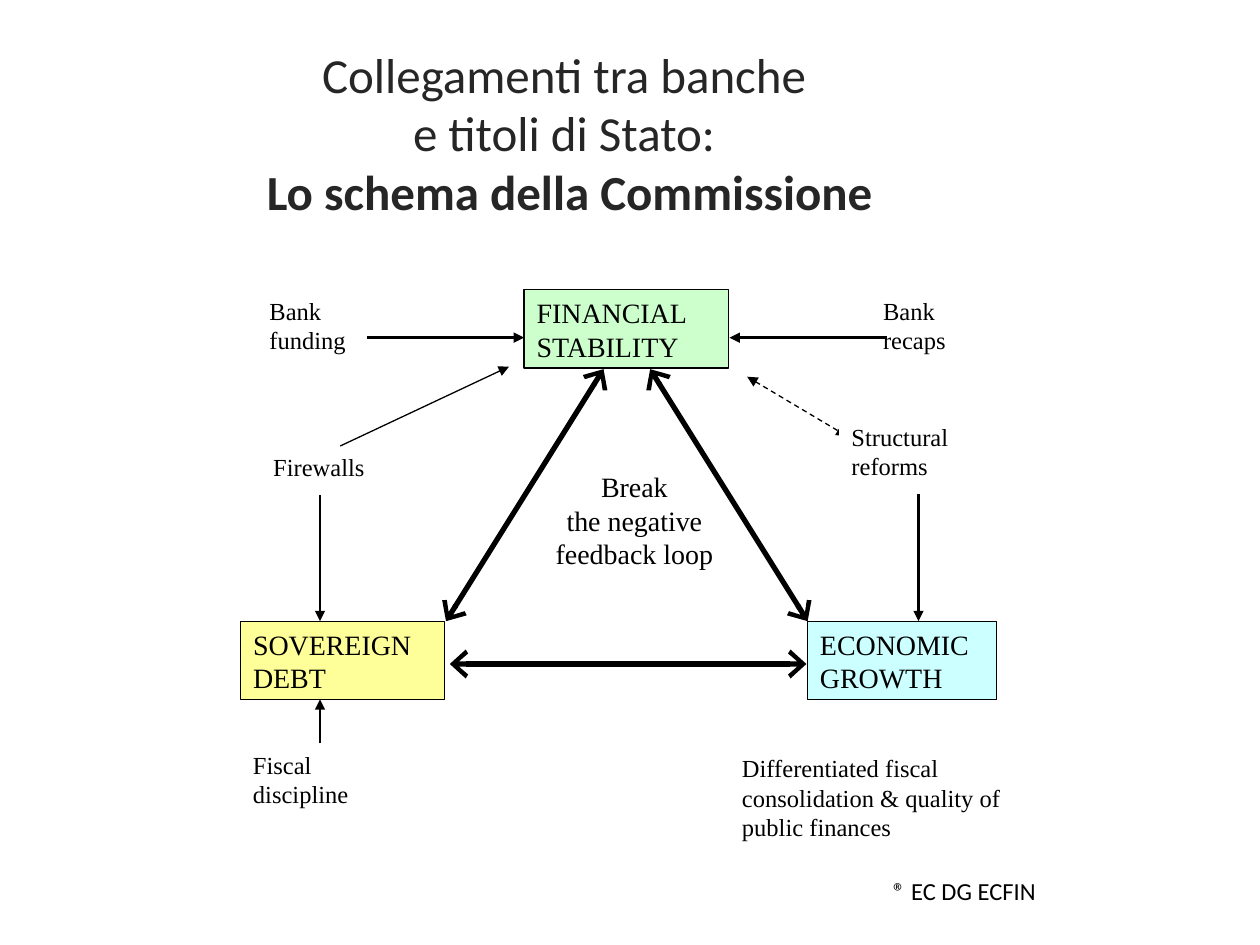
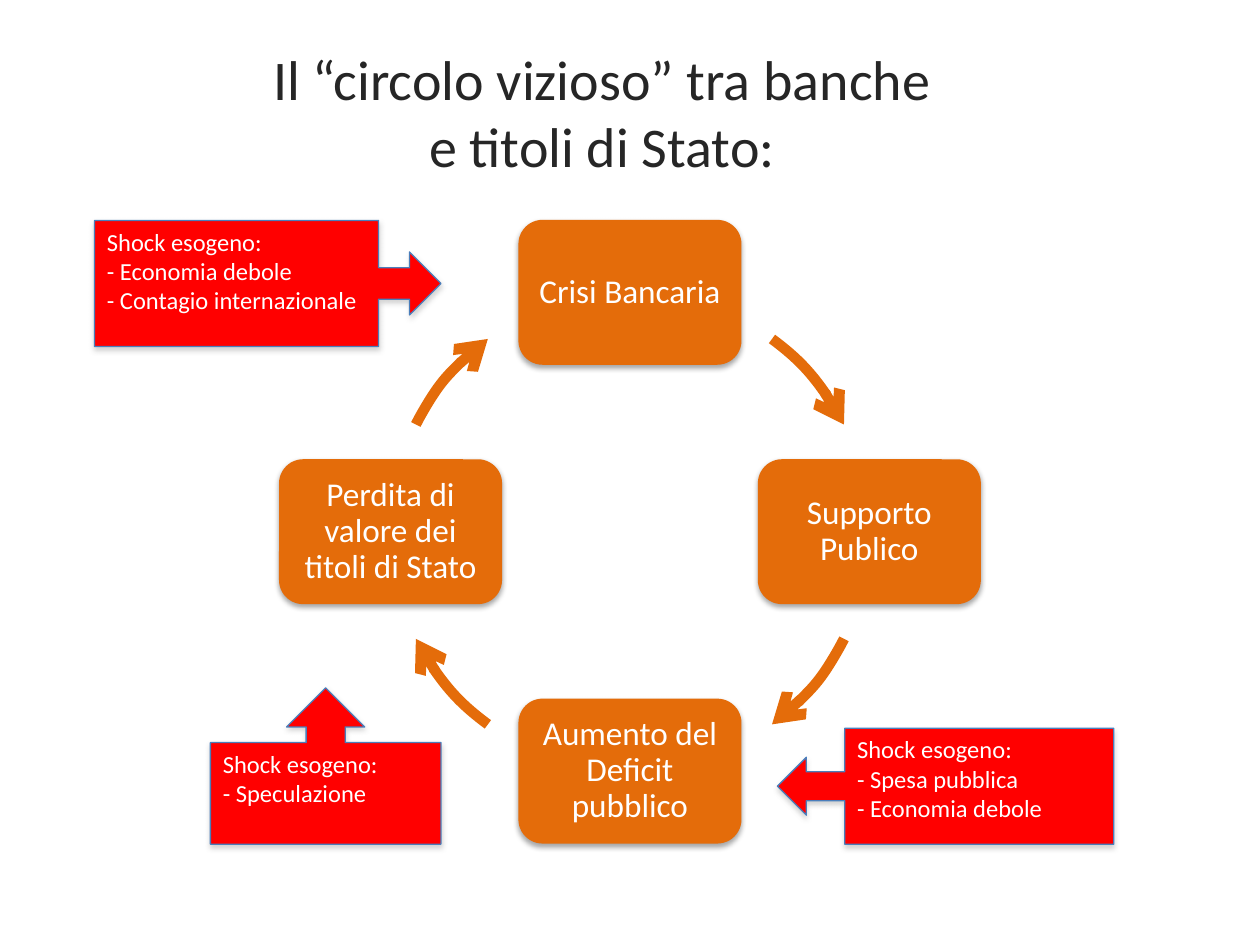
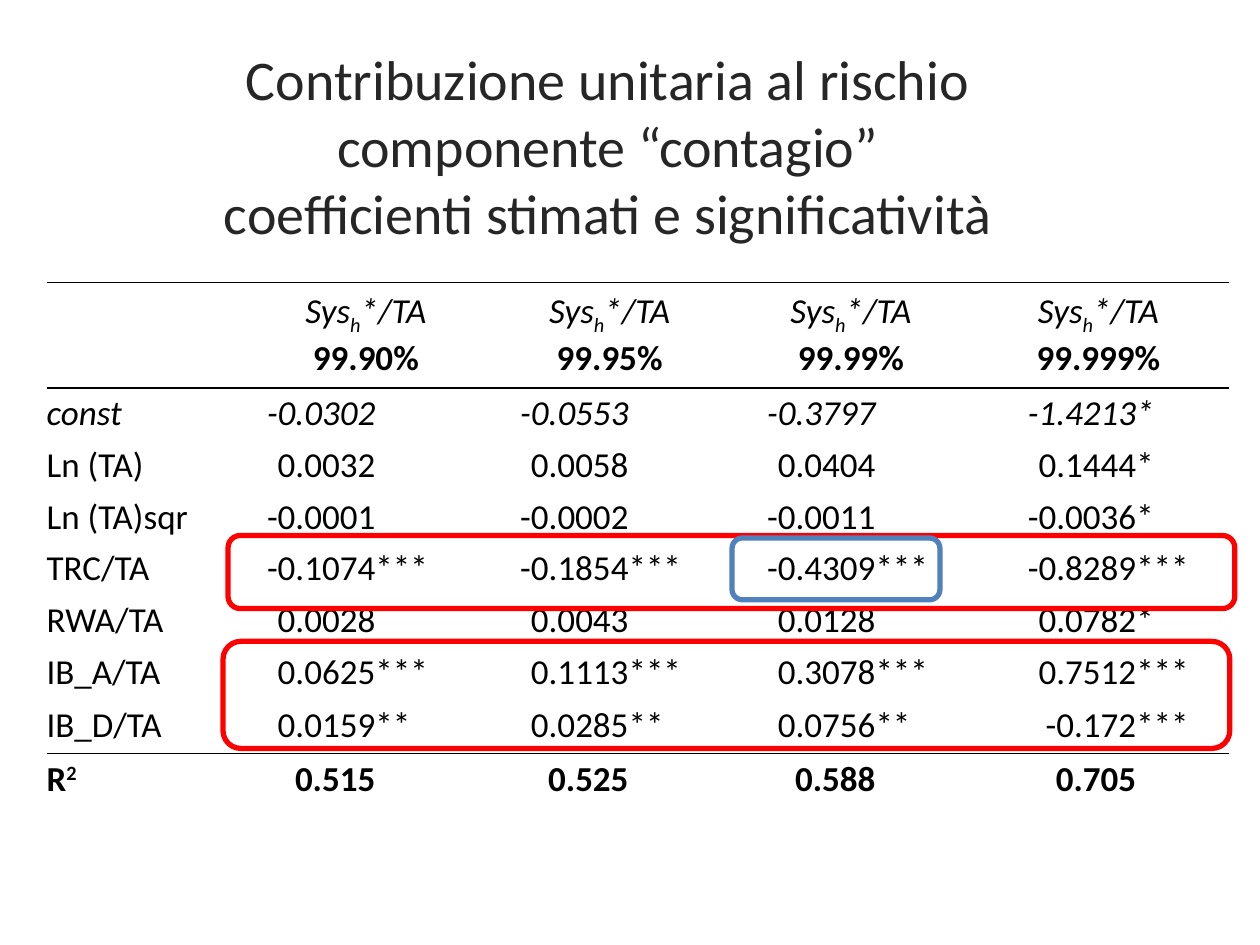
import math
from dataclasses import dataclass
from typing import Any, Optional

import pptx
import pptx.dml.color
import pptx.enum.dml
import pptx.enum.shapes
import pptx.enum.text
import pptx.oxml
import pptx.oxml.ns
import pptx.util

Inches = pptx.util.Inches
Pt = pptx.util.Pt
Align = pptx.enum.text.PP_ALIGN
Anchor = pptx.enum.text.MSO_ANCHOR
Preset = pptx.enum.shapes.MSO_SHAPE

BLACK, WHITE, TITLE_GREY = "000000", "FFFFFF", "262626"
ORANGE, RED, BLUE, CALLOUT_EDGE = "E46C0A", "FF0000", "4F81BD", "4A7EBB"
SANS, SERIF = "Calibri", "Times New Roman"
PLAIN_TABLE = "{2D5ABB26-0587-4C30-8999-92F81FD0307C}"
ANGLE_UNIT = 60000


@dataclass(frozen=True)
class Style:
    font: str
    size: float
    color: str = BLACK
    align: Any = Align.LEFT
    spacing: Optional[float] = None


@dataclass(frozen=True)
class Span:
    text: str
    bold: bool = False
    italic: bool = False
    baseline: int = 0


@dataclass(frozen=True)
class Box:
    left: float
    top: float
    width: float
    height: float
    text: str = ""
    fill: Optional[str] = None
    edge: Optional[str] = None
    weight: float = 0.75
    preset: Any = Preset.RECTANGLE


@dataclass(frozen=True)
class Arrow:
    start: tuple[float, float]
    end: tuple[float, float]
    weight: float
    tail: str = "triangle"
    head: Optional[str] = None
    dashed: bool = False
    glue: Optional[tuple[str, int]] = None
    head_width: str = "med"


@dataclass(frozen=True)
class Callout:
    box: Box
    body_share: float


NODE = Style(SERIF, 16)
LABEL = Style(SERIF, 14)
LOOP = Style(SERIF, 16, align=Align.CENTER)
CREDIT = Style(SANS, 14)
CYCLE = Style(SANS, 19, WHITE, Align.CENTER, 0.9)
SHOCK = Style(SANS, 14, WHITE)


# Shared drawing functions

def rgb(value: str) -> pptx.dml.color.RGBColor:
    return pptx.dml.color.RGBColor.from_string(value)


def element(tag: str, **attributes: Any) -> Any:
    node = pptx.oxml.parse_xml(f"<a:{tag} {pptx.oxml.ns.nsdecls('a')}/>")
    for name, value in attributes.items():
        node.set(name, str(value))
    return node


def write(frame: Any, paragraphs: list[list[Span]], style: Style) -> None:
    frame.word_wrap = True
    for index, spans in enumerate(paragraphs):
        para = frame.add_paragraph() if index else frame.paragraphs[0]
        para.alignment = style.align
        if style.spacing:
            para.line_spacing = style.spacing
        for span in spans:
            for number, line in enumerate(span.text.split("\n")):
                if number:
                    para.add_line_break()
                if not line:
                    continue
                run = para.add_run()
                run.text = line
                run.font.name, run.font.size = style.font, Pt(style.size)
                run.font.bold, run.font.italic = span.bold, span.italic
                run.font.color.rgb = rgb(style.color)
                if span.baseline:
                    run._r.get_or_add_rPr().set("baseline", str(span.baseline * 1000))


def plain(text: str) -> list[list[Span]]:
    return [[Span(line)] for line in text.split("\n")]


def add_text(page: Any, box: Box, paragraphs: list[list[Span]], style: Style) -> None:
    lengths = map(Inches, (box.left, box.top, box.width, box.height))
    write(page.shapes.add_textbox(*lengths).text_frame, paragraphs, style)


def add_title(page: Any, left: float, width: float, size: float, spans: list[Span]) -> None:
    style = Style(SANS, size, TITLE_GREY, Align.CENTER)
    add_text(page, Box(left, 0.3, width, 1.25), [spans], style)


def add_box(page: Any, box: Box, style: Optional[Style] = None) -> Any:
    lengths = map(Inches, (box.left, box.top, box.width, box.height))
    shape = page.shapes.add_shape(box.preset, *lengths)
    shape.shadow.inherit = False
    if box.fill:
        shape.fill.solid()
        shape.fill.fore_color.rgb = rgb(box.fill)
    else:
        shape.fill.background()
    if box.edge:
        shape.line.color.rgb = rgb(box.edge)
        shape.line.width = Pt(box.weight)
    else:
        shape.line.fill.background()
    if style:
        shape.text_frame.vertical_anchor = Anchor.TOP
        write(shape.text_frame, plain(box.text), style)
    return shape


def add_shadow(shape: Any, color: str) -> None:
    shadow = element("outerShdw", blurRad=Pt(3.1), dist=Pt(1.8),
                     dir=90 * ANGLE_UNIT, rotWithShape=0)
    tint = element("srgbClr", val=color)
    tint.append(element("alpha", val=35000))
    shadow.append(tint)
    shape.element.spPr.find(pptx.oxml.ns.qn("a:effectLst")).append(shadow)


def add_arrowheads(shape: Any, head: Optional[str], tail: Optional[str],
                   width: str = "med") -> None:
    outline = shape.element.spPr.find(pptx.oxml.ns.qn("a:ln"))
    for tag, kind in (("headEnd", head), ("tailEnd", tail)):
        if kind:
            outline.append(element(tag, type=kind, w=width, len="med"))


def add_arrow(page: Any, arrow: Arrow, boxes: dict[str, Any]) -> None:
    lengths = map(Inches, (*arrow.start, *arrow.end))
    line = page.shapes.add_connector(pptx.enum.shapes.MSO_CONNECTOR.STRAIGHT, *lengths)
    if arrow.glue:
        name, side = arrow.glue
        line.begin_connect(boxes[name], side)
    line.line.color.rgb = rgb(BLACK)
    line.line.width = Pt(arrow.weight)
    if arrow.dashed:
        line.line.dash_style = pptx.enum.dml.MSO_LINE.DASH
    add_arrowheads(line, arrow.head, arrow.tail, arrow.head_width)
    line.element.spPr.append(element("effectLst"))


# Slide 1: the Commission's scheme

SCHEME_NODES = [
    Box(4.16, 2.3, 1.62, 0.62, "FINANCIAL STABILITY", "CCFFCC", BLACK,
        preset=Preset.FLOWCHART_PROCESS),
    Box(1.91, 4.93, 1.62, 0.62, "SOVEREIGN DEBT", "FFFF99", BLACK),
    Box(6.41, 4.93, 1.5, 0.62, "ECONOMIC GROWTH", "CCFFFF", BLACK),
]
SCHEME_LABELS = [
    Box(6.66, 3.3, 1.26, 0.62, "Structural reforms", WHITE),
    Box(1.91, 5.9, 1.26, 0.62, "Fiscal discipline", WHITE),
    Box(2.04, 2.3, 1, 0.62, "Bank funding", WHITE),
    Box(6.91, 2.3, 0.88, 0.62, "Bank\nrecaps", WHITE),
    Box(2.07, 3.54, 1, 0.38, "Firewalls", WHITE),
    Box(5.79, 5.93, 2.25, 0.88,
        "Differentiated fiscal consolidation & quality of public finances", WHITE),
]
REFORM_LINK = Arrow((5.93, 2.99), (6.72, 3.46), 0.75, head="triangle", dashed=True)
LOOP_SIDES = [((5.16, 2.93), (6.41, 4.93)), ((4.79, 2.93), (3.54, 4.93)),
              ((3.57, 5.27), (6.4, 5.27))]
SCHEME_ARROWS = [
    *(Arrow(start, end, 3, "arrow", "arrow", head_width="lg") for start, end in LOOP_SIDES),
    Arrow((7.29, 3.92), (7.29, 4.93), 1.5, glue=("Structural reforms", 2)),
    Arrow((2.54, 3.93), (2.54, 4.93), 1.5),
    Arrow((2.91, 2.68), (4.16, 2.68), 1.5),
    Arrow((7.04, 2.68), (5.79, 2.68), 1.5),
    Arrow((2.54, 5.9), (2.54, 5.55), 0.75, glue=("Fiscal discipline", 0)),
    Arrow((2.7, 3.54), (4.04, 2.91), 0.75),
]


def build_scheme(page: Any) -> None:
    add_title(page, 1.53, 5.98, 28, [
        Span("Collegamenti tra banche \ne titoli di Stato: \n"),
        Span("Lo schema della Commissione", bold=True)])
    add_arrow(page, REFORM_LINK, {})
    for node in SCHEME_NODES:
        add_box(page, node, NODE)
    add_text(page, Box(4.16, 3.68, 1.75, 1),
             plain("Break\nthe negative\nfeedback loop"), LOOP)
    labels = {label.text: add_box(page, label, LABEL) for label in SCHEME_LABELS}
    for arrow in SCHEME_ARROWS:
        add_arrow(page, arrow, labels)
    add_text(page, Box(6.99, 6.9, 2.51, 0.34), plain("® EC DG ECFIN"), CREDIT)


# Slide 2: the vicious circle

CENTER_X, CENTER_Y, RADIUS = 5, 4.22, 1.9
STEP_WIDTH, STEP_HEIGHT = 1.77, 1.15
STEPS = ["Crisi Bancaria", "Supporto Publico", "Aumento del Deficit pubblico",
         "Perdita di valore dei titoli di Stato"]
ARC_OFFSETS, ARC_SWEEP = (36.4, 26.6), 27
SHOCKS = [
    Callout(Box(1.67, 5.46, 1.83, 1.24, "Shock esogeno:\n- Speculazione",
                RED, CALLOUT_EDGE, preset=Preset.UP_ARROW_CALLOUT), 0.65),
    Callout(Box(6.17, 5.78, 2.67, 0.92,
                "Shock esogeno:\n- Spesa pubblica\n- Economia debole",
                RED, CALLOUT_EDGE, preset=Preset.LEFT_ARROW_CALLOUT), 0.8),
    Callout(Box(0.75, 1.75, 2.75, 1,
                "Shock esogeno:\n- Economia debole\n- Contagio internazionale",
                RED, CALLOUT_EDGE, preset=Preset.RIGHT_ARROW_CALLOUT), 0.82),
]


def on_circle(degrees: float) -> tuple[float, float]:
    """Point on the circle, measured clockwise from the top."""
    angle = math.radians(degrees)
    return CENTER_X + RADIUS * math.sin(angle), CENTER_Y - RADIUS * math.cos(angle)


def add_step(page: Any, text: str, degrees: float) -> None:
    x, y = on_circle(degrees)
    shape = add_box(page, Box(x - STEP_WIDTH / 2, y - STEP_HEIGHT / 2, STEP_WIDTH,
                              STEP_HEIGHT, text, ORANGE,
                              preset=Preset.ROUNDED_RECTANGLE), CYCLE)
    add_shadow(shape, BLACK)
    frame = shape.text_frame
    frame.vertical_anchor = Anchor.MIDDLE
    frame.margin_left = frame.margin_right = Inches(0.08)
    frame.margin_top = frame.margin_bottom = Inches(0.08)


def add_arc(page: Any, start: float) -> None:
    begin, end = (tuple(map(Inches, on_circle(angle))) for angle in (start, start + ARC_SWEEP))
    builder = page.shapes.build_freeform(*begin)
    builder.add_line_segments([end], close=False)
    arc = builder.convert_to_shape()

    # The frame covers the whole circle, and the chord becomes a true arc
    arc.left, arc.top = Inches(CENTER_X - RADIUS), Inches(CENTER_Y - RADIUS)
    arc.width = arc.height = Inches(2 * RADIUS)
    outline = next(arc.element.iter(pptx.oxml.ns.qn("a:path")))
    outline.set("w", str(arc.width))
    outline.set("h", str(arc.height))
    outline.set("fill", "none")
    origin = next(outline.iter(pptx.oxml.ns.qn("a:pt")))
    origin.set("x", str(begin[0] - arc.left))
    origin.set("y", str(begin[1] - arc.top))
    outline.remove(outline.find(pptx.oxml.ns.qn("a:lnTo")))
    outline.append(element("arcTo", wR=Inches(RADIUS), hR=Inches(RADIUS),
                           stAng=round((start + 270) % 360 * ANGLE_UNIT),
                           swAng=ARC_SWEEP * ANGLE_UNIT))

    arc.shadow.inherit = False
    arc.fill.background()
    arc.line.color.rgb = rgb(ORANGE)
    arc.line.width = Pt(6)
    add_arrowheads(arc, None, "arrow")


def build_circle(page: Any) -> None:
    add_title(page, 0.33, 9, 32,
              [Span("Il “circolo vizioso” tra banche \ne titoli di Stato: ")])
    for index, text in enumerate(STEPS):
        add_step(page, text, index * 90)
        add_arc(page, index * 90 + ARC_OFFSETS[index % 2])
    for shock in SHOCKS:
        shape = add_box(page, shock.box, SHOCK)
        for index, value in enumerate((0.25, 0.25, 0.25, shock.body_share)):
            shape.adjustments[index] = value
        add_shadow(shape, "808080")


# Slide 3: table of estimated coefficients

COLUMN_WIDTHS = [1.59, 1.02, 0.87, 1.14, 0.84, 1.12, 0.73, 1.34, 0.74]
ROW_HEIGHTS = [0.84] + [0.41] * 6 + [0.44, 0.41]
LEVELS = ["99.90%", "99.95%", "99.99%", "99.999%"]
COEFFICIENTS = [
    ["const", "-0.0302", "", "-0.0553", "", "-0.3797", "", "-1.4213", "*"],
    ["Ln (TA)", "0.0032", "", "0.0058", "", "0.0404", "", "0.1444", "*"],
    ["Ln (TA)sqr", "-0.0001", "", "-0.0002", "", "-0.0011", "", "-0.0036", "*"],
    ["TRC/TA", "-0.1074", "***", "-0.1854", "***", "-0.4309", "***", "-0.8289", "***"],
    ["RWA/TA", "0.0028", "", "0.0043", "", "0.0128", "", "0.0782", "*"],
    ["IB_A/TA", "0.0625", "***", "0.1113", "***", "0.3078", "***", "0.7512", "***"],
    ["IB_D/TA", "0.0159", "**", "0.0285", "**", "0.0756", "**", "-0.172", "***"],
    ["R", "0.515", "", "0.525", "", "0.588", "", "0.705", ""],
]
COLUMN_ALIGNS = [Align.LEFT] + [Align.RIGHT, Align.LEFT] * 3 + [Align.RIGHT, Align.JUSTIFY]
TOP_RULES, BOTTOM_RULES = {0, 1, 8}, {0, 7}
HIGHLIGHTS = [
    Box(1.81, 4.25, 7.99, 0.58, edge=RED, weight=3, preset=Preset.ROUNDED_RECTANGLE),
    Box(1.77, 5.09, 7.99, 0.85, edge=RED, weight=3, preset=Preset.ROUNDED_RECTANGLE),
    Box(5.81, 4.27, 1.65, 0.49, edge=BLUE, weight=3, preset=Preset.ROUNDED_RECTANGLE),
]


def add_rule(cell: Any, tag: str, position: int, visible: bool) -> None:
    rule = element(tag, w=Pt(1))
    paint = element("solidFill" if visible else "noFill")
    if visible:
        paint.append(element("srgbClr", val=BLACK))
    rule.append(paint)
    cell._tc.get_or_add_tcPr().insert(position, rule)


def format_cell(cell: Any, row: int) -> None:
    cell.margin_left = cell.margin_right = cell.margin_top = cell.margin_bottom = 0
    cell.vertical_anchor = Anchor.MIDDLE
    cell.fill.background()
    add_rule(cell, "lnT", 0, row in TOP_RULES)
    add_rule(cell, "lnB", 1, row in BOTTOM_RULES)


def add_coefficients(page: Any) -> None:
    frame = page.shapes.add_table(
        len(ROW_HEIGHTS), len(COLUMN_WIDTHS), Inches(0.37), Inches(2.24),
        Inches(sum(COLUMN_WIDTHS)), Inches(sum(ROW_HEIGHTS)))
    table = frame.table
    table.first_row = table.horz_banding = False
    table._tbl.tblPr.find(pptx.oxml.ns.qn("a:tableStyleId")).text = PLAIN_TABLE
    for column, width in zip(table.columns, COLUMN_WIDTHS):
        column.width = Inches(width)
    for row, height in enumerate(ROW_HEIGHTS):
        table.rows[row].height = Inches(height)
        for cell in table.rows[row].cells:
            format_cell(cell, row)

    for index, level in enumerate(LEVELS):
        cell = table.cell(0, 2 * index + 1)
        cell.merge(table.cell(0, 2 * index + 2))
        heading = [Span("Sys", italic=True), Span("h", italic=True, baseline=-25),
                   Span("*/TA", italic=True)]
        write(cell.text_frame, [heading, [Span(level, bold=True)]],
              Style(SANS, 20, align=Align.CENTER))

    for row, values in enumerate(COEFFICIENTS, start=1):
        for column, text in enumerate(values):
            if not text:
                continue
            bold = values[0] == "R"
            spans = [Span(text, bold=bold, italic=values[0] == "const")]
            if text == "R":
                spans.append(Span("2", bold=bold, baseline=30))
            write(table.cell(row, column).text_frame, [spans],
                  Style(SANS, 20, align=COLUMN_ALIGNS[column]))


def build_estimates(page: Any) -> None:
    add_title(page, 1.21, 7.23, 32, [
        Span("Contribuzione unitaria al rischio\ncomponente “contagio”\n"
             "coefficienti stimati e significatività")])
    add_coefficients(page)
    for highlight in HIGHLIGHTS:
        add_box(page, highlight)


def main() -> None:
    deck = pptx.Presentation()
    deck.slide_width, deck.slide_height = Inches(10), Inches(7.5)
    for build in (build_scheme, build_circle, build_estimates):
        build(deck.slides.add_slide(deck.slide_layouts[6]))
    deck.save("out.pptx")


if __name__ == "__main__":
    main()
